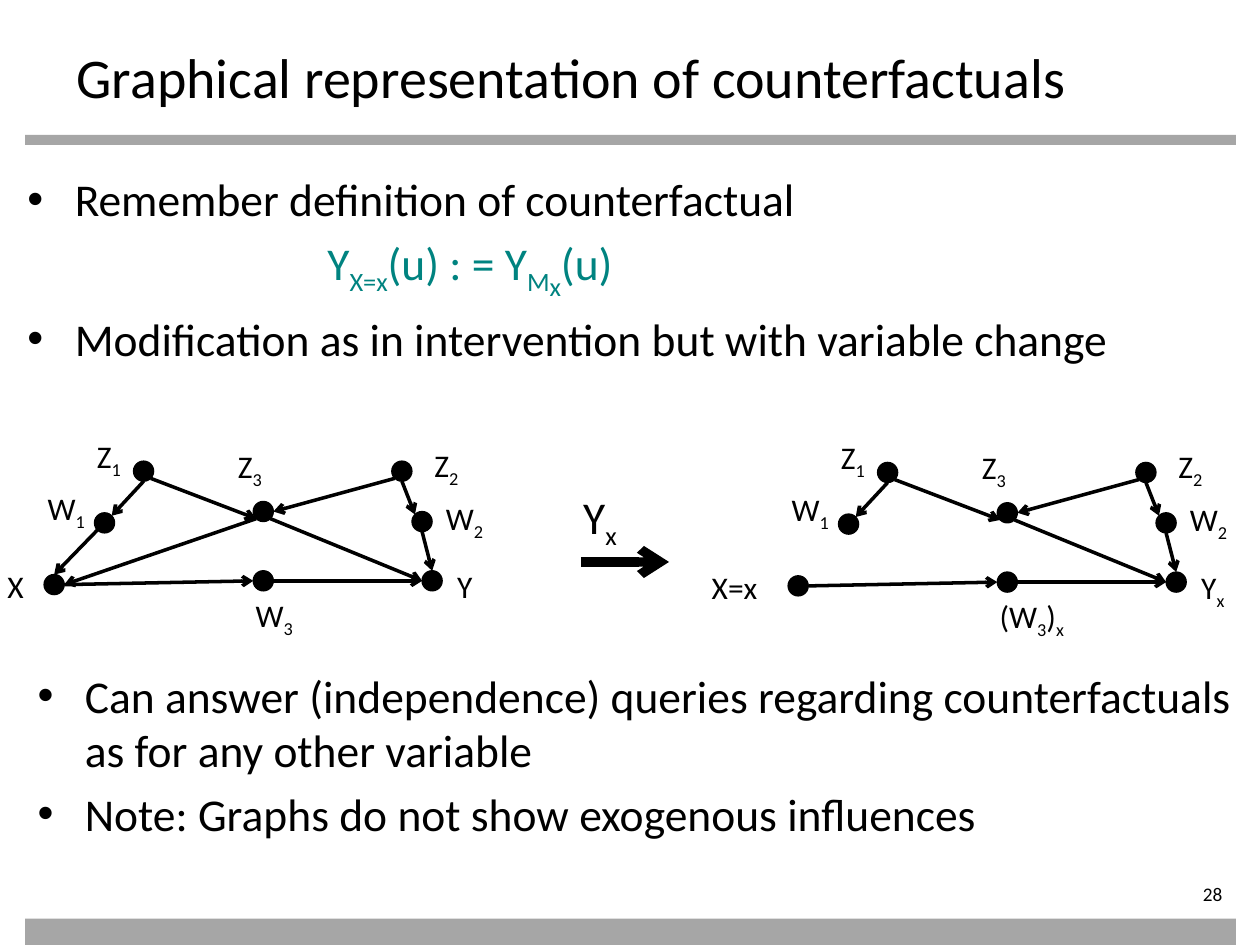
import math
from dataclasses import dataclass
from typing import NamedTuple

import pptx
import pptx.dml.color
import pptx.enum.shapes
import pptx.enum.text
import pptx.oxml.ns
import pptx.util
from lxml import etree

COLS, ROWS = 100, 75
CELL = pptx.util.Inches(0.1)
DOT = 1.6
INDENT = 3.75


@dataclass(frozen=True)
class Theme:
    font: str = "Calibri"
    ink: str = "000000"
    bar: str = "A6A6A6"
    formula: str = "008380"
    title: int = 32
    body: int = 26
    label: int = 18
    number: int = 11
    edge: float = 2
    big_arrow: float = 5.25


class Run(NamedTuple):
    text: str
    baseline: int = 0


class Label(NamedTuple):
    col: float
    row: float
    width: float
    runs: tuple[Run, ...]


class Edge(NamedTuple):
    start: str
    start_side: str
    end: str
    end_side: str


@dataclass(frozen=True)
class Graph:
    col: float
    row: float
    edges: tuple[Edge, ...]
    labels: tuple[Label, ...]


def sub(text: str, depth: int = 25) -> Run:
    return Run(text, -depth)


THEME = Theme()
SIDES = {"e": 0, "ne": 45, "n": 90, "nw": 135, "w": 180, "sw": 225, "s": 270, "se": 315}
NODES = {
    "X": (4.3, 46.4), "Y": (34.3, 46.1),
    "Z1": (11.4, 37.4), "Z2": (31.9, 37.4), "Z3": (20.9, 40.6),
    "W1": (8.3, 41.5), "W2": (33.5, 41.4), "W3": (20.9, 46.1),
}
INTO_X = (Edge("Z3", "sw", "X", "e"), Edge("W1", "sw", "X", "n"))
KEPT = (
    Edge("Z1", "s", "W1", "ne"), Edge("Z2", "s", "W2", "nw"),
    Edge("Z1", "se", "Z3", "sw"), Edge("Z2", "sw", "Z3", "e"),
    Edge("X", "e", "W3", "w"), Edge("W3", "e", "Y", "w"),
    Edge("Z3", "se", "Y", "w"), Edge("W2", "s", "Y", "n"),
)
SHARED_LABELS = (
    Label(6.7, 34.2, 4.3, (Run("Z"), sub("1"))),
    Label(33.5, 34.9, 4.3, (Run("Z"), sub("2"))),
    Label(17.9, 35, 4.3, (Run("Z"), sub("3"))),
    Label(2.8, 38.3, 5, (Run("W"), sub("1"))),
    Label(34.4, 39.1, 5, (Run("W"), sub("2"))),
)
GRAPHS = (
    Graph(0, 0, KEPT + INTO_X, SHARED_LABELS + (
        Label(-0.4, 44.5, 3.5, (Run("X"),)),
        Label(35.3, 44.5, 3.4, (Run("Y"),)),
        Label(19.3, 46.8, 5, (Run("W"), sub("3"))))),
    Graph(59.05, 0.1, KEPT, SHARED_LABELS + (
        Label(-3.55, 44.5, 6.1, (Run("X=x"),)),
        Label(35.3, 44.5, 4.2, (Run("Y"), sub("x"))),
        Label(19.3, 46.8, 7.2, (Run("(W"), sub("3"), Run(")"), sub("x"))))),
)


def grid(cells: float) -> int:
    return round(cells * CELL)


def rgb(value: str) -> pptx.dml.color.RGBColor:
    return pptx.dml.color.RGBColor.from_string(value)


def add_runs(p, runs: tuple[Run, ...], size: int, color: str = THEME.ink) -> None:
    for run in runs:
        r = p.add_run()
        r.text = run.text
        r.font.name, r.font.size = THEME.font, pptx.util.Pt(size)
        r.font.color.rgb = rgb(color)
        if run.baseline:
            r._r.get_or_add_rPr().set("baseline", str(run.baseline * 1000))


def add_box(s, col: float, row: float, width: float, height: float):
    tf = s.shapes.add_textbox(*map(grid, (col, row, width, height))).text_frame
    tf.word_wrap = True
    return tf


def add_label(s, label: Label, size: int, height: float = 4,
              col: float = 0, row: float = 0) -> None:
    tf = add_box(s, label.col + col, label.row + row, label.width, height)
    tf.word_wrap = False
    tf.auto_size = pptx.enum.text.MSO_AUTO_SIZE.SHAPE_TO_FIT_TEXT
    add_runs(tf.paragraphs[0], label.runs, size)


def next_paragraph(tf):
    p = tf.paragraphs[0]
    if p.runs:
        p = tf.add_paragraph()
        p.space_before = pptx.util.Pt(THEME.body * 0.2)
    return p


def add_bullet(tf, text: str) -> None:
    p = next_paragraph(tf)
    pPr = p._p.get_or_add_pPr()
    pPr.set("marL", str(grid(INDENT)))
    pPr.set("indent", str(-grid(INDENT)))
    etree.SubElement(pPr, pptx.oxml.ns.qn("a:buFont")).set("typeface", "Arial")
    etree.SubElement(pPr, pptx.oxml.ns.qn("a:buChar")).set("char", "•")
    add_runs(p, (Run(text),), THEME.body)


def add_filled(s, kind, col: float, row: float, width: float, height: float, color: str):
    sp = s.shapes.add_shape(kind, *map(grid, (col, row, width, height)))
    sp.shadow.inherit = False
    sp.fill.solid()
    sp.fill.fore_color.rgb = rgb(color)
    sp.line.fill.background()
    return sp


def add_arrow(s, start: tuple[float, float], end: tuple[float, float], width: float) -> None:
    line = s.shapes.add_connector(pptx.enum.shapes.MSO_CONNECTOR.STRAIGHT,
                                  *map(grid, (*start, *end)))
    line.line.width = pptx.util.Pt(width)
    line.line.color.rgb = rgb(THEME.ink)
    spPr = line._element.spPr
    ln = spPr.find(pptx.oxml.ns.qn("a:ln"))
    etree.SubElement(ln, pptx.oxml.ns.qn("a:tailEnd")).set("type", "arrow")
    etree.SubElement(spPr, pptx.oxml.ns.qn("a:effectLst"))


def rim(graph: Graph, node: str, side: str) -> tuple[float, float]:
    """Point on a node's outline in the given compass direction."""
    x, y = NODES[node]
    angle = math.radians(SIDES[side])
    return (graph.col + x + DOT / 2 * math.cos(angle),
            graph.row + y - DOT / 2 * math.sin(angle))


def draw_graph(s, graph: Graph) -> None:
    for x, y in NODES.values():
        sp = add_filled(s, pptx.enum.shapes.MSO_SHAPE.OVAL, graph.col + x - DOT / 2,
                        graph.row + y - DOT / 2, DOT, DOT, THEME.ink)
        sp.line.color.rgb = rgb(THEME.ink)
        sp.line.width = pptx.util.Pt(0.75)
    for e in graph.edges:
        add_arrow(s, rim(graph, e.start, e.start_side), rim(graph, e.end, e.end_side), THEME.edge)
    for label in graph.labels:
        add_label(s, label, THEME.label, col=graph.col, row=graph.row)


def main() -> None:
    prs = pptx.Presentation()
    prs.slide_width, prs.slide_height = grid(COLS), grid(ROWS)
    s = prs.slides.add_slide(prs.slide_layouts[6])

    for row, height in ((10.7, 0.8), (72.9, 2.1)):
        add_filled(s, pptx.enum.shapes.MSO_SHAPE.RECTANGLE, 2, row, 96.1, height, THEME.bar)

    title = add_box(s, 5.1, 2.9, 90, 5.5)
    add_runs(title.paragraphs[0], (Run("Graphical representation of counterfactuals"),), THEME.title)

    top = add_box(s, 1.2, 13.1, 97.6, 18.1)
    add_bullet(top, "Remember definition of counterfactual")
    p = next_paragraph(top)
    p._p.get_or_add_pPr().set("marL", str(grid(23.8)))
    add_runs(p, (Run("Y"), sub("X=x"), Run("(u) : = Y"), sub("M"), sub("x", 35), Run("(u)")),
             THEME.body, THEME.formula)
    add_bullet(top, "Modification as in intervention but with variable change")

    for graph in GRAPHS:
        draw_graph(s, graph)
    add_arrow(s, (46.1, 44.6), (53.1, 44.6), THEME.big_arrow)
    add_label(s, Label(45.3, 38.3, 5.1, (Run("Y"), sub("x"))), THEME.body, 5.4)

    bottom = add_box(s, 2, 52.5, 97.6, 18.1)
    add_bullet(bottom, "Can answer (independence) queries regarding counterfactuals "
                       "as for any other variable")
    add_bullet(bottom, "Note: Graphs do not show exogenous influences")

    number = add_box(s, 87, 70, 11, 2.2)
    number.margin_left = number.margin_top = number.margin_bottom = 0
    number.paragraphs[0].alignment = pptx.enum.text.PP_ALIGN.RIGHT
    add_runs(number.paragraphs[0], (Run("28"),), THEME.number)

    prs.save("out.pptx")


if __name__ == "__main__":
    main()
